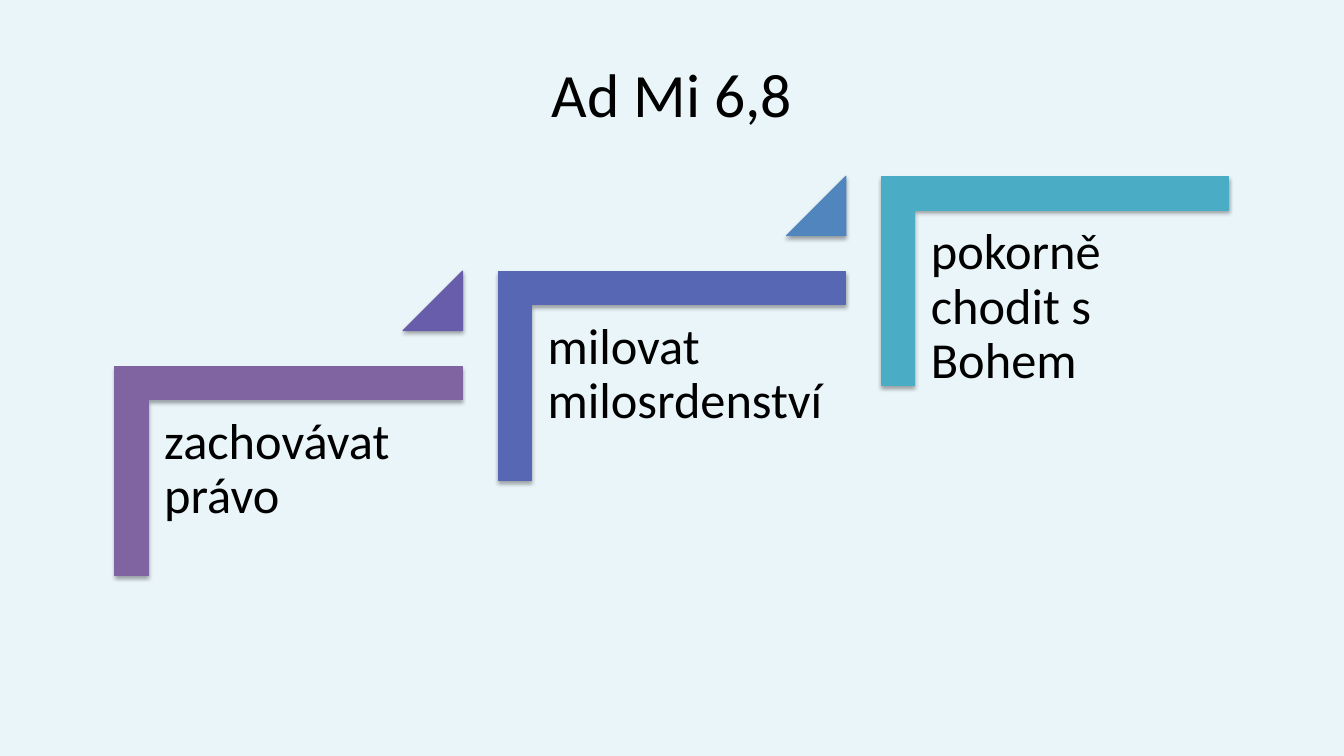
from lxml.etree import SubElement
from pptx import Presentation
from pptx.dml.color import RGBColor
from pptx.enum.shapes import MSO_SHAPE
from pptx.enum.text import MSO_ANCHOR, PP_ALIGN
from pptx.oxml.ns import qn
from pptx.util import Cm, Pt

COLORS = {
    "background": "EAF5F9", "text": "000000", "shadow": "000000",
    "step1": "8064A2", "step2": "5767B4", "step3": "4BACC6",
    "rise1": "685DAB", "rise2": "5185BD",
}


class SlideBuilder:
    def __init__(self, prs, font):
        self.s = prs.slides.add_slide(prs.slide_layouts[6])
        self.font = font

    def color(self, name):
        return RGBColor.from_string(COLORS[name])

    def background(self, name):
        fill = self.s.background.fill
        fill.solid()
        fill.fore_color.rgb = self.color(name)

    def text(self, box, text, size, inset, frame=None, para=None):
        tf = self.s.shapes.add_textbox(*map(Cm, box)).text_frame
        margins = {f"margin_{side}": Cm(inset)
                   for side in ("left", "top", "right", "bottom")}
        p = tf.paragraphs[0]
        r = p.add_run()
        r.text = text
        r.font.color.rgb = self.color("text")
        formats = ((tf, {"word_wrap": True, **margins, **(frame or {})}),
                   (p, para or {}),
                   (r.font, {"name": self.font, "size": Pt(size)}))
        for target, values in formats:
            for key, value in values.items():
                setattr(target, key, value)

    def shape(self, kind, box, color, adjustments, rotation=0):
        sp = self.s.shapes.add_shape(kind, *map(Cm, box))
        sp.rotation = rotation
        for i, value in enumerate(adjustments):
            sp.adjustments[i] = value
        sp.fill.solid()
        sp.fill.fore_color.rgb = sp.line.color.rgb = self.color(color)
        sp.line.width = Pt(0.75)
        self.shadow(sp)

    def shadow(self, sp):
        sp.shadow.inherit = False
        effects = sp._element.spPr.find(qn("a:effectLst"))
        outer = SubElement(effects, qn("a:outerShdw"), blurRad=str(Pt(3.1)),
                           dist=str(Pt(1.8)), dir="5400000", rotWithShape="0")
        clr = SubElement(outer, qn("a:srgbClr"), val=COLORS["shadow"])
        SubElement(clr, qn("a:alpha"), val="35000")


def main():
    prs = Presentation()
    prs.slide_width, prs.slide_height = Cm(33.87), Cm(19.05)
    slide = SlideBuilder(prs, "Calibri")
    slide.background("background")

    # Title
    slide.text((1.7, 0.76, 30.48, 3.18), "Ad Mi 6,8", 44, 0.2,
               {"vertical_anchor": MSO_ANCHOR.MIDDLE},
               {"alignment": PP_ALIGN.CENTER})

    # Rising steps, each with a triangle leading to the next
    steps = [
        ("zachovávat právo", PP_ALIGN.LEFT, "step1", "rise1"),
        ("milovat milosrdenství", PP_ALIGN.JUSTIFY, "step2", "rise2"),
        ("pokorně chodit s Bohem", PP_ALIGN.LEFT, "step3", None),
    ]
    for i, (label, align, step, rise) in enumerate(steps):
        dx, dy = 9.66 * i, -2.39 * i
        slide.shape(MSO_SHAPE.CORNER, (4.64 + dx, 7.49 + dy, 5.26, 8.75),
                    step, (0.16, 0.16), rotation=90)
        slide.text((3.76 + dx, 10.1 + dy, 7.88, 6.91), label, 36, 0.38,
                   para={"alignment": align, "line_spacing": 0.9})
        if rise:
            slide.shape(MSO_SHAPE.ISOSCELES_TRIANGLE,
                        (10.16 + dx, 6.83 + dy, 1.5, 1.5), rise, (1,))

    prs.save("out.pptx")


if __name__ == "__main__":
    main()
